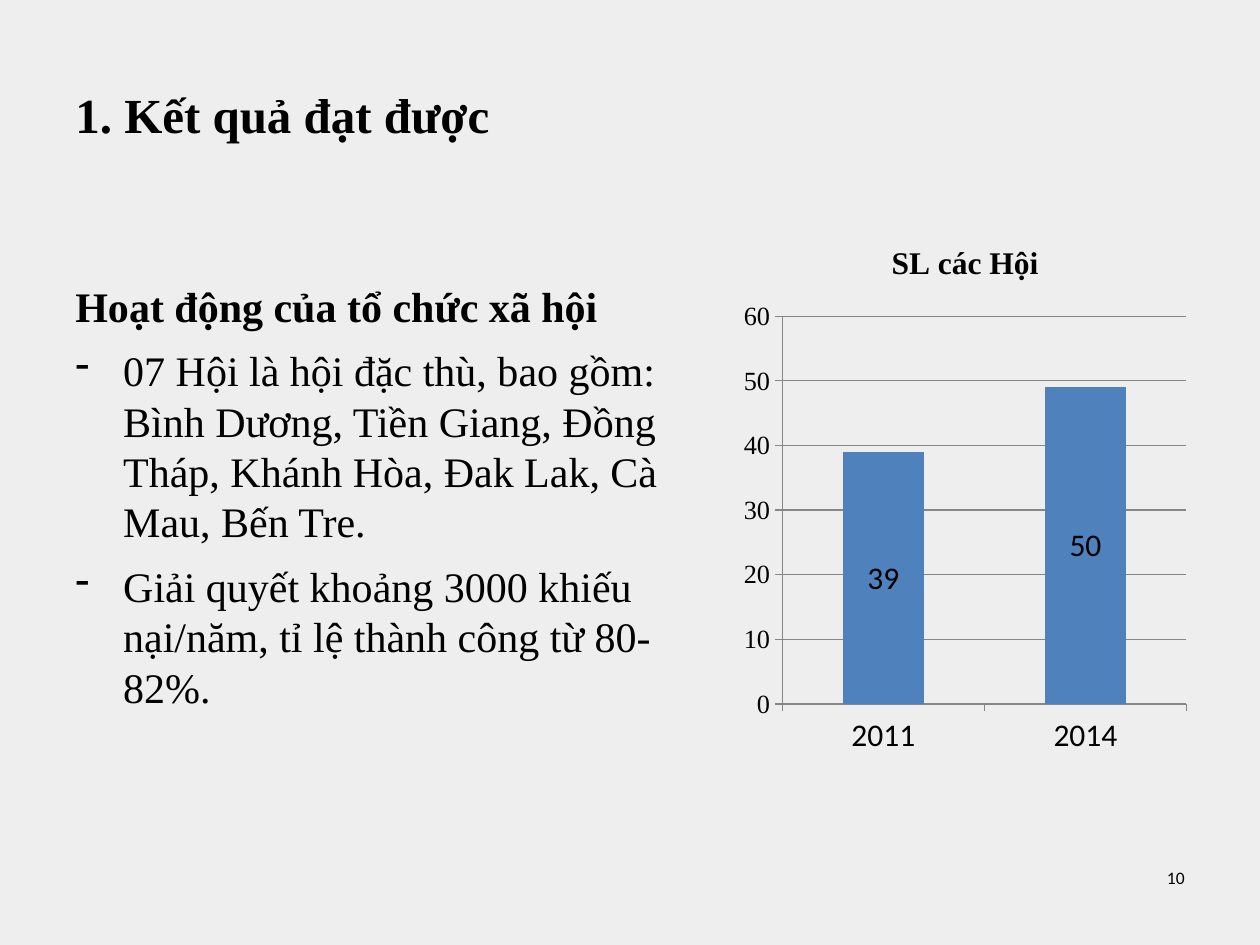
from dataclasses import dataclass

from lxml import etree
from pptx import Presentation
from pptx.chart.data import CategoryChartData
from pptx.dml.color import RGBColor
from pptx.enum.chart import XL_CHART_TYPE, XL_LABEL_POSITION, XL_TICK_MARK
from pptx.enum.text import MSO_ANCHOR, PP_ALIGN
from pptx.oxml.ns import qn
from pptx.util import Inches, Pt

STACKED = XL_CHART_TYPE.COLUMN_STACKED
CENTER = XL_LABEL_POSITION.CENTER
OUTSIDE = XL_TICK_MARK.OUTSIDE
TOP, MIDDLE = MSO_ANCHOR.TOP, MSO_ANCHOR.MIDDLE
LEFT, RIGHT = PP_ALIGN.LEFT, PP_ALIGN.RIGHT

WIDTH, HEIGHT = Inches(10), Inches(7.5)
COLORS = {"background": "EEEEEE", "text": "000000", "bar": "4F81BD", "axis": "868686"}
SERIF, SANS = "Times New Roman", "Calibri"
HANGING = Inches(0.38)


@dataclass(frozen=True)
class Area:
    """Rectangle given as shares of the slide's size."""
    left: float
    top: float
    width: float
    height: float

    def lengths(self) -> tuple[int, int, int, int]:
        """Return left, top, width and height as slide lengths."""
        return (int(self.left * WIDTH), int(self.top * HEIGHT),
                int(self.width * WIDTH), int(self.height * HEIGHT))


@dataclass(frozen=True)
class Line:
    """One paragraph with its weight and bullet."""
    text: str
    bold: bool = False
    bulleted: bool = False


@dataclass(frozen=True)
class TextBlock:
    """A text area whose lines share one format."""
    area: Area
    lines: tuple[Line, ...]
    size: float
    font: str = SERIF
    anchor: int = TOP
    align: int = LEFT
    spacing: float = 0


BLOCKS = (
    TextBlock(Area(0.05, 0.29, 0.533, 0.66), (
        Line("Hoạt động của tổ chức xã hội", bold=True),
        Line("07 Hội là hội đặc thù, bao gồm: Bình Dương, Tiền Giang, Đồng Tháp, "
             "Khánh Hòa, Đak Lak, Cà Mau, Bến Tre.", bulleted=True),
        Line("Giải quyết khoảng 3000 khiếu nại/năm, tỉ lệ thành công từ 80-82%.",
             bulleted=True),
    ), size=24, spacing=4),
    TextBlock(Area(0.05, 0.052, 0.9, 0.136), (Line("1. Kết quả đạt được", bold=True),),
              size=28, anchor=MIDDLE),
    TextBlock(Area(0.717, 0.911, 0.233, 0.069), (Line("10"),),
              size=10, font=SANS, align=RIGHT),
)
CHART_AREA = Area(0.583, 0.233, 0.366, 0.577)


def rgb(name: str) -> RGBColor:
    """Look up a named colour."""
    return RGBColor.from_string(COLORS[name])


def set_font(font, size: float, name: str, bold: bool = False) -> None:
    """Apply the slide's text format to a font."""
    for attribute, value in {"size": Pt(size), "name": name, "bold": bold}.items():
        setattr(font, attribute, value)
    font.color.rgb = rgb("text")


def add_dash(paragraph) -> None:
    """Give a paragraph a hanging dash bullet."""
    properties = paragraph._p.get_or_add_pPr()
    properties.set("marL", str(HANGING))
    properties.set("indent", str(-HANGING))
    etree.SubElement(properties, qn("a:buFontTx"))
    etree.SubElement(properties, qn("a:buChar"), char="-")


def add_text(slide, block: TextBlock) -> None:
    """Draw one text block."""
    frame = slide.shapes.add_textbox(*block.area.lengths()).text_frame
    frame.word_wrap = True
    frame.vertical_anchor = block.anchor
    for index, line in enumerate(block.lines):
        paragraph = frame.add_paragraph() if index else frame.paragraphs[0]
        paragraph.alignment = block.align
        paragraph.space_before = Pt(block.spacing if index else 0)
        paragraph.space_after = Pt(block.spacing)
        if line.bulleted:
            add_dash(paragraph)
        run = paragraph.add_run()
        run.text = line.text
        set_font(run.font, block.size, block.font, line.bold)


def add_association_chart(slide) -> None:
    """Draw the column chart of association counts."""
    counts = CategoryChartData()
    counts.categories = ["2011", "2014"]
    counts.add_series("Series 1", (39, 49))
    chart = slide.shapes.add_chart(STACKED, *CHART_AREA.lengths(), counts).chart
    set_font(chart.font, 18, SANS)
    chart.has_legend = False
    chart.has_title = True
    heading = chart.chart_title.text_frame.paragraphs[0].add_run()
    heading.text = "SL các Hội"
    set_font(heading.font, 18, SERIF, bold=True)
    chart.chart_title.include_in_layout = False

    years, scale = chart.category_axis, chart.value_axis
    scale.has_major_gridlines = True
    for axis in (years, scale):
        axis.major_tick_mark = OUTSIDE
    for ruled in (years, scale, scale.major_gridlines):
        ruled.format.line.color.rgb = rgb("axis")
        ruled.format.line.width = Pt(0.75)
    for attribute, value in {"minimum_scale": 0, "maximum_scale": 60, "major_unit": 10}.items():
        setattr(scale, attribute, value)
    set_font(scale.tick_labels.font, 15, SERIF)

    plot = chart.plots[0]
    for attribute, value in {"gap_width": 150, "overlap": 100, "vary_by_categories": False}.items():
        setattr(plot, attribute, value)
    bars = plot.series[0]
    bars.format.fill.solid()
    bars.format.fill.fore_color.rgb = rgb("bar")
    labels = bars.data_labels
    labels.show_value = True
    labels.position = CENTER
    set_font(labels.font, 18, SANS)
    latest = bars.points[1].data_label
    rounded = latest.text_frame.paragraphs[0].add_run()
    rounded.text = "50"
    set_font(rounded.font, 18, SANS)
    latest.position = CENTER


def main() -> None:
    """Build and save the slide."""
    deck = Presentation()
    deck.slide_width, deck.slide_height = WIDTH, HEIGHT
    slide = deck.slides.add_slide(deck.slide_layouts[6])
    slide.background.fill.solid()
    slide.background.fill.fore_color.rgb = rgb("background")
    for block in BLOCKS:
        add_text(slide, block)
    add_association_chart(slide)
    deck.save("out.pptx")


if __name__ == "__main__":
    main()
